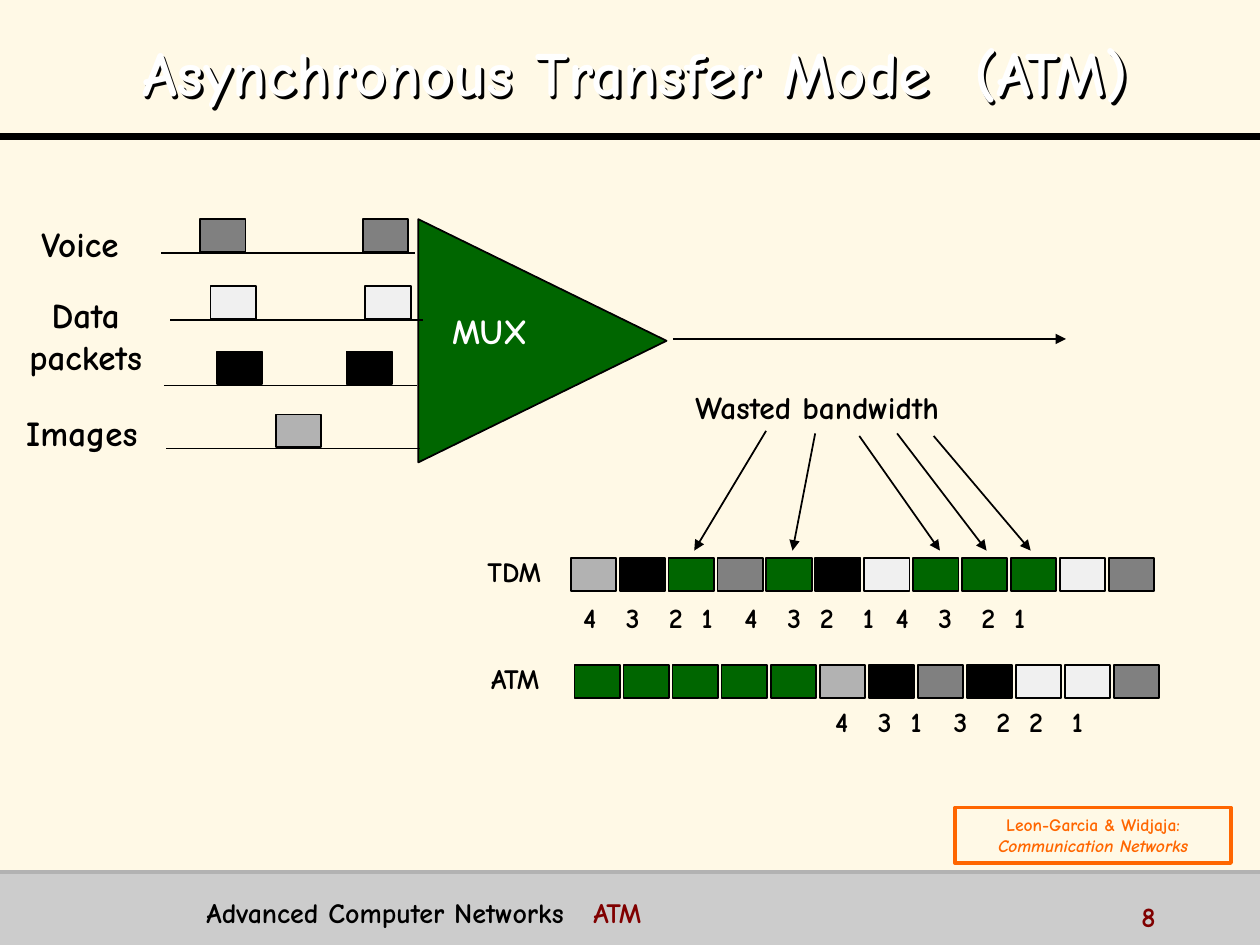
from dataclasses import dataclass
from itertools import accumulate

from lxml.etree import SubElement
from pptx import Presentation
from pptx.dml.color import RGBColor
from pptx.enum.shapes import MSO_CONNECTOR as Link, MSO_SHAPE as Form
from pptx.enum.text import MSO_ANCHOR as Anchor, PP_ALIGN as Align
from pptx.oxml.ns import qn
from pptx.util import Inches, Pt


@dataclass(frozen=True)
class Theme:
    font: str = "Comic Neue"
    paper: str = "FFF9E6"
    ink: str = "000000"
    white: str = "FFFFFF"
    bar: str = "CCCCCC"
    bar_edge: str = "B2B2B2"
    accent: str = "800000"
    source: str = "FF6600"
    voice: str = "808080"
    data: str = "F0F0F0"
    packets: str = "000000"
    images: str = "B2B2B2"
    idle: str = "006600"
    title_size: int = 36
    lane_size: int = 20
    note_size: int = 18
    label_size: int = 16
    source_size: int = 10


THEME = Theme()
CELL_W, CELL_H = 0.36, 0.26
WIDE, NARROW = 0.34, 0.26
CELL_COLOURS = {"V": THEME.voice, "D": THEME.data, "P": THEME.packets,
                "I": THEME.images, "-": THEME.idle}


def rgb(code):
    return RGBColor.from_string(code)


def add_run(paragraph, text, size, colour, **extra):
    run = paragraph.add_run()
    run.text = text
    run.font.color.rgb = rgb(colour)
    style = {"name": THEME.font, "size": Pt(size), "bold": True, **extra}
    for attribute, value in style.items():
        setattr(run.font, attribute, value)
    return run


def add_label(slide, box, text, size, colour=THEME.ink, align=Align.LEFT, wrap=False):
    frame = slide.shapes.add_textbox(*map(Inches, box)).text_frame
    frame.word_wrap = wrap
    paragraph = frame.paragraphs[0]
    paragraph.alignment = align
    add_run(paragraph, text, size, colour)
    return paragraph


def set_tabs(paragraph, stops):
    tabs = SubElement(paragraph._p.get_or_add_pPr(), qn("a:tabLst"))
    for stop in stops:
        SubElement(tabs, qn("a:tab"), pos=str(Inches(stop)), algn="l")


def add_block(slide, box, fill=None, line=None, width=1, form=Form.RECTANGLE):
    block = slide.shapes.add_shape(form, *map(Inches, box))
    block.shadow.inherit = False
    if fill:
        block.fill.solid()
        block.fill.fore_color.rgb = rgb(fill)
    else:
        block.fill.background()
    if line:
        block.line.color.rgb = rgb(line)
        block.line.width = Pt(width)
    else:
        block.line.fill.background()
    return block


def add_line(slide, start, end, colour=THEME.ink, width=1, arrow=False):
    line = slide.shapes.add_connector(Link.STRAIGHT, *map(Inches, (*start, *end)))
    line.line.color.rgb = rgb(colour)
    line.line.width = Pt(width)
    if arrow:
        SubElement(line.line._get_or_add_ln(), qn("a:tailEnd"), type="triangle")
    SubElement(line._element.spPr, qn("a:effectLst"))


def add_cell(slide, left, top, colour):
    add_block(slide, (left, top, CELL_W, CELL_H), colour, THEME.ink)


def add_heading(slide, box):
    left, top, width, height = box
    title = slide.shapes.title
    places = dict(zip(("left", "top", "width", "height"), map(Inches, box)))
    for attribute, value in places.items():
        setattr(title, attribute, value)
    title.fill.background()
    effects = SubElement(title._element.spPr, qn("a:effectLst"))
    shadow = SubElement(effects, qn("a:outerShdw"), dist=str(Pt(2.25)), dir="2700000",
                        algn="ctr", rotWithShape="0")
    SubElement(shadow, qn("a:srgbClr"), val=THEME.ink)
    frame = title.text_frame
    frame.vertical_anchor = Anchor.MIDDLE
    paragraph = frame.paragraphs[0]
    paragraph.alignment = Align.CENTER
    paragraph.line_spacing = 1.1
    for text, spacing in (("Asynchronous Transfer Mode", 0), (" ", 1250), ("(ATM)", 0)):
        run = add_run(paragraph, text, THEME.title_size, THEME.white)
        if spacing:
            run.font._element.set("spc", str(spacing))
    add_line(slide, (0, top + height), (10, top + height), width=4)


def add_footer(slide, box):
    left, top, width, height = box
    add_block(slide, box, THEME.bar)
    add_line(slide, (left, top), (left + width, top), THEME.bar_edge, 2)
    course = add_label(slide, (left + 1.54, top + 0.14, 7.28, 0.31),
                       "Advanced Computer Networks\t", THEME.label_size)
    set_tabs(course, [3.07])
    add_run(course, "ATM", THEME.label_size, THEME.accent)
    add_label(slide, (left + 8.96, top + 0.17, 1, 0.25), "8",
              THEME.label_size, THEME.accent)


def add_multiplexer(slide, box):
    """Four input lanes feeding a triangle with one output arrow."""
    left, top, width, height = box
    lanes = ((1.28, 0.29, THEME.voice, (1.59, 2.88)),
             (1.35, 0.82, THEME.data, (1.67, 2.9)),
             (1.3, 1.34, THEME.packets, (1.72, 2.75)),
             (1.32, 1.84, THEME.images, (2.19,)))
    mux = add_block(slide, (left + 3.34, top, 1.93, height), THEME.idle,
                    THEME.ink, form=Form.ISOSCELES_TRIANGLE)
    mux.rotation = 90
    add_label(slide, (left + 3.49, top + 0.69, 0.86, 0.43), "MUX",
              THEME.lane_size, THEME.white)
    for start, base, colour, cells in lanes:
        for cell in cells:
            add_cell(slide, left + cell, top + base - CELL_H - 0.01, colour)
        add_line(slide, (left + start, top + base), (left + start + 2.01, top + base))
    for name, x, y, w, h in (("Voice", 0.08, 0, 1.11, 0.43),
                             ("Data packets", 0, 0.56, 1.36, 0.76),
                             ("Images", 0, 1.5, 1.3, 0.43)):
        add_label(slide, (left + x, top + y, w, h), name, THEME.lane_size,
                  align=Align.CENTER, wrap=True)
    add_line(slide, (left + 5.34, top + 0.97), (left + width, top + 0.97), arrow=True)


def add_wasted_bandwidth(slide, box):
    left, top, width, height = box
    add_label(slide, (left, top, width, 0.4), "Wasted bandwidth", THEME.note_size)
    for start, drop, end in ((0.66, 0.39, 0.09), (1.05, 0.41, 0.87), (1.4, 0.43, 2.04),
                             (1.7, 0.41, 2.41), (1.99, 0.43, 2.76)):
        add_line(slide, (left + start, top + drop), (left + end, top + height), arrow=True)


def add_cell_stream(slide, box, name, cells, numbers, numbers_at, gaps):
    """A named row of cells; gaps holds W or N for each step between numbers."""
    left, top, width, height = box
    pitch = (width - CELL_W) / (len(cells) - 1)
    for index, kind in enumerate(cells):
        add_cell(slide, left + index * pitch, top, CELL_COLOURS[kind])
    add_label(slide, (left - 0.76, top - 0.08, 0.72, 0.37), name, THEME.label_size)
    row = add_label(slide, (left + numbers_at, top + height, width - numbers_at, 0.37),
                    "\t".join(numbers), THEME.label_size)
    set_tabs(row, accumulate(WIDE if gap == "W" else NARROW for gap in gaps))


def add_source_note(slide, box):
    frame = add_block(slide, box, line=THEME.source, width=2).text_frame
    frame.word_wrap = True
    frame.vertical_anchor = Anchor.MIDDLE
    author, work = frame.paragraphs[0], frame.add_paragraph()
    for paragraph, text, italic in ((author, "Leon-Garcia & Widjaja:", False),
                                    (work, "Communication Networks", True)):
        paragraph.alignment = Align.CENTER
        add_run(paragraph, text, THEME.source_size, THEME.source, italic=italic)


def main():
    deck = Presentation()
    deck.slide_width, deck.slide_height = Inches(10), Inches(7.5)
    slide = deck.slides.add_slide(deck.slide_layouts[5])
    slide.background.fill.solid()
    slide.background.fill.fore_color.rgb = rgb(THEME.paper)
    add_footer(slide, (0, 6.92, 10, 0.58))
    add_heading(slide, (0.04, 0, 10, 1.08))
    add_multiplexer(slide, (0, 1.72, 8.46, 1.97))
    add_wasted_bandwidth(slide, (5.42, 3.03, 2.47, 1.34))
    add_cell_stream(slide, (4.53, 4.43, 4.63, 0.29), "TDM", "IP-V-PD---DV",
                    "432143214321", 0, "WWNWWNWNWWN")
    add_cell_stream(slide, (4.56, 5.28, 4.64, 0.26), "ATM", "-----IPVPDDV",
                    "4313221", 1.97, "WNWWNW")
    add_source_note(slide, (7.58, 6.41, 2.19, 0.44))
    deck.save("out.pptx")


if __name__ == "__main__":
    main()
